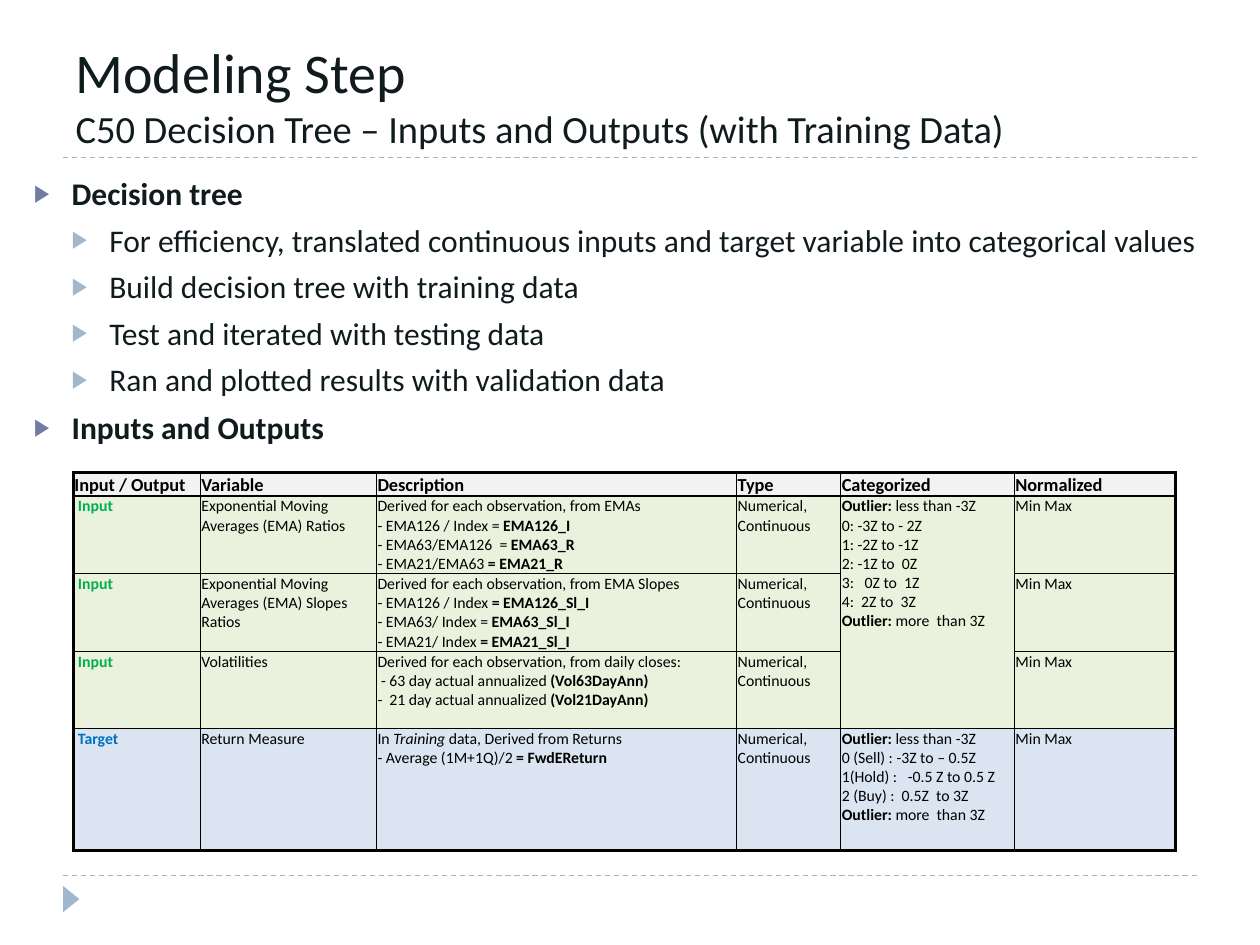
from lxml import etree
from pptx import Presentation
from pptx.dml.color import RGBColor
from pptx.enum.dml import MSO_LINE
from pptx.enum.shapes import MSO_CONNECTOR, MSO_SHAPE
from pptx.enum.text import MSO_ANCHOR, MSO_AUTO_SIZE, PP_ALIGN
from pptx.oxml.ns import qn
from pptx.util import Cm, Pt

STRAIGHT, TRIANGLE = MSO_CONNECTOR.STRAIGHT, MSO_SHAPE.ISOSCELES_TRIANGLE
DASH, LEFT = MSO_LINE.DASH, PP_ALIGN.LEFT
TOP, BOTTOM = MSO_ANCHOR.TOP, MSO_ANCHOR.BOTTOM
NO_FIT = MSO_AUTO_SIZE.NONE

FONT = "Calibri"
INK = RGBColor(0x10, 0x1B, 0x1D)
BLACK = RGBColor(0, 0, 0)
SKY = RGBColor(0x9F, 0xB8, 0xCD)
INDIGO = RGBColor(0x72, 0x7C, 0xA3)
GREEN = RGBColor(0x00, 0xB0, 0x50)
BLUE = RGBColor(0x00, 0x70, 0xC0)
HEADER_FILL = RGBColor(0xF2, 0xF2, 0xF2)
INPUT_FILL = RGBColor(0xEA, 0xF1, 0xDD)
TARGET_FILL = RGBColor(0xDB, 0xE5, 0xF1)

# Content: ** switches bold, ~ switches italic, a tuple holds paragraphs
TITLE = [("Modeling Step", 32),
         ("C50 Decision Tree – Inputs and Outputs (with Training Data)", 22)]
BULLETS = [
    (0, "**Decision tree**"),
    (1, "For efficiency, translated continuous inputs and target variable into categorical values"),
    (1, "Build decision tree with training data"),
    (1, "Test and iterated with testing data"),
    (1, "Ran and plotted results with validation data"),
    (0, "**Inputs and Outputs**"),
]
# Level: indent in cm, space before in points, bullet colour
LEVELS = [(0.76, 6, INDIGO), (1.52, 5, SKY)]

HEADER = ["Input / Output", "Variable", "Description", "Type", "Categorized", "Normalized"]
NUMERIC, SCALE = "Numerical, Continuous", "Min Max"
ROWS = [
    [f"**{name}**" for name in HEADER],
    ["** Input**", "Exponential Moving Averages (EMA) Ratios",
     ("Derived for each observation, from EMAs\n- EMA126 / Index = **EMA126_I**",
      "- EMA63/EMA126  = **EMA63_R**\n- EMA21/EMA63 **= EMA21_R**"),
     NUMERIC,
     "**Outlier:** less than -3Z\n0: -3Z to - 2Z\n1: -2Z to -1Z\n2: -1Z to  0Z\n"
     "3:   0Z to  1Z\n4:  2Z to  3Z\n**Outlier:** more  than 3Z",
     SCALE],
    ["** Input**", "Exponential Moving Averages (EMA) Slopes Ratios",
     "Derived for each observation, from EMA Slopes\n- EMA126 / Index **= EMA126_Sl_I**\n"
     "- EMA63/ Index = **EMA63_Sl_I**\n- EMA21/ Index **= EMA21_Sl_I**",
     NUMERIC, None, SCALE],
    ["** Input**", "Volatilities",
     "Derived for each observation, from daily closes:\n"
     " - 63 day actual annualized **(Vol63DayAnn)**\n"
     "-  21 day actual annualized **(Vol21DayAnn)**",
     NUMERIC, None, SCALE],
    ["** Target**", "Return Measure",
     "In ~Training~ data, Derived from Returns\n- Average (1M+1Q)/2 **= FwdEReturn**",
     NUMERIC,
     ("**Outlier:** less than -3Z\n0 (Sell) : -3Z to – 0.5Z\n1(Hold) :   -0.5 Z to 0.5 Z",
      "2 (Buy) :  0.5Z  to 3Z\n**Outlier:** more  than 3Z"),
     SCALE],
]
ROW_FILLS = [HEADER_FILL] + [INPUT_FILL] * 3 + [TARGET_FILL]
ROLE_COLORS = [BLACK] + [GREEN] * 3 + [BLUE]
COLUMN_WIDTHS = [2.56, 3.55, 7.26, 2.1, 3.5, 3.25]
ROW_HEIGHTS = [0.45, 1.55, 1.55, 1.55, 2.47]
THICK, MEDIUM, THIN = 2.25, 1, 0.5


def add_span(para, text, size, color, bold=False, italic=False):
    span = para.add_run()
    span.text = text
    font = span.font
    font.name, font.size, font.bold, font.italic = FONT, Pt(size), bold, italic
    font.color.rgb = color


def add_marked(para, text, size, color):
    for i, strong in enumerate(text.split("**")):
        bold = i % 2 == 1
        for j, slanted in enumerate(strong.split("~")):
            italic = j % 2 == 1
            for k, line in enumerate(slanted.split("\n")):
                if k:
                    para.add_line_break()
                if line:
                    add_span(para, line, size, color, bold, italic)


def place(box, left, top, width, height):
    box.left, box.top, box.width, box.height = Cm(left), Cm(top), Cm(width), Cm(height)


def set_bullet(para, indent, color):
    props = para._p.get_or_add_pPr()
    props.set("marL", str(Cm(indent)))
    props.set("indent", str(-Cm(LEVELS[0][0])))
    holder = etree.SubElement(props, qn("a:buClr"))
    etree.SubElement(holder, qn("a:srgbClr"), val=str(color))
    etree.SubElement(props, qn("a:buSzPct"), val="76000")
    etree.SubElement(props, qn("a:buChar"), char="▶")


def set_borders(cell, widths):
    props = cell._tc.get_or_add_tcPr()
    for index, (side, width) in enumerate(zip("LRTB", widths)):
        line = etree.Element(qn(f"a:ln{side}"), w=str(Pt(width)))
        fill = etree.SubElement(line, qn("a:solidFill"))
        etree.SubElement(fill, qn("a:srgbClr"), val=str(BLACK))
        props.insert(index, line)


def edge_width(index, last):
    """Width of a grid line: thick outside, medium after the first band."""
    return THICK if index in (0, last) else MEDIUM if index == 1 else THIN


deck = Presentation()
deck.slide_width, deck.slide_height = Cm(25.4), Cm(19.05)
page = deck.slides.add_slide(deck.slide_layouts[1])

# Dashed rules and corner marker
for y in (17.65, 3.17):
    rule = page.shapes.add_connector(STRAIGHT, Cm(1.27), Cm(y), Cm(24.13), Cm(y))
    rule.line.color.rgb, rule.line.width, rule.line.dash_style = SKY, Pt(0.75), DASH
    etree.SubElement(rule._element.spPr, qn("a:effectLst"))
marker = page.shapes.add_shape(TRIANGLE, Cm(1.17), Cm(17.96), Cm(0.53), Cm(0.33))
marker.rotation = 90
marker.shadow.inherit = False
marker.fill.solid()
marker.fill.fore_color.rgb = SKY
marker.line.fill.background()

# Title
title = page.shapes.title
place(title, 1.27, 0.43, 22.86, 2.74)
title.text_frame.auto_size, title.text_frame.vertical_anchor = NO_FIT, BOTTOM
para = title.text_frame.paragraphs[0]
para.alignment = LEFT
for number, (text, size) in enumerate(TITLE):
    if number:
        para.add_line_break()
    add_span(para, text, size, INK)

# Bullet list
body = page.placeholders[1]
place(body, 0.43, 3.38, 24.56, 6.15)
body.text_frame.auto_size, body.text_frame.vertical_anchor = NO_FIT, TOP
for number, (level, text) in enumerate(BULLETS):
    para = body.text_frame.add_paragraph() if number else body.text_frame.paragraphs[0]
    indent, space, color = LEVELS[level]
    para.level, para.space_before = level, Pt(space)
    set_bullet(para, indent, color)
    add_marked(para, text, 18, INK)

# Table
frame = page.shapes.add_table(len(ROWS), len(HEADER), Cm(1.48), Cm(9.53),
                              Cm(sum(COLUMN_WIDTHS)), Cm(sum(ROW_HEIGHTS)))
table = frame.table
table.first_row = table.horz_banding = False
for column, width in zip(table.columns, COLUMN_WIDTHS):
    column.width = Cm(width)
for row, height in zip(table.rows, ROW_HEIGHTS):
    row.height = Cm(height)
for r, contents in enumerate(ROWS):
    for c, content in enumerate(contents):
        cell = table.cell(r, c)
        cell.margin_left = cell.margin_right = cell.margin_top = Cm(0.02)
        cell.margin_bottom = 0
        cell.vertical_anchor = TOP
        cell.fill.solid()
        cell.fill.fore_color.rgb = ROW_FILLS[r]
        set_borders(cell, [edge_width(c, len(HEADER)), edge_width(c + 1, len(HEADER)),
                           edge_width(r, len(ROWS)), edge_width(r + 1, len(ROWS))])
        if content is None:
            continue
        paragraphs = content if isinstance(content, tuple) else (content,)
        for number, text in enumerate(paragraphs):
            para = cell.text_frame.add_paragraph() if number else cell.text_frame.paragraphs[0]
            add_marked(para, text, 9 if r else 10.5, BLACK if c else ROLE_COLORS[r])
table.cell(1, 4).merge(table.cell(3, 4))

deck.save("out.pptx")
